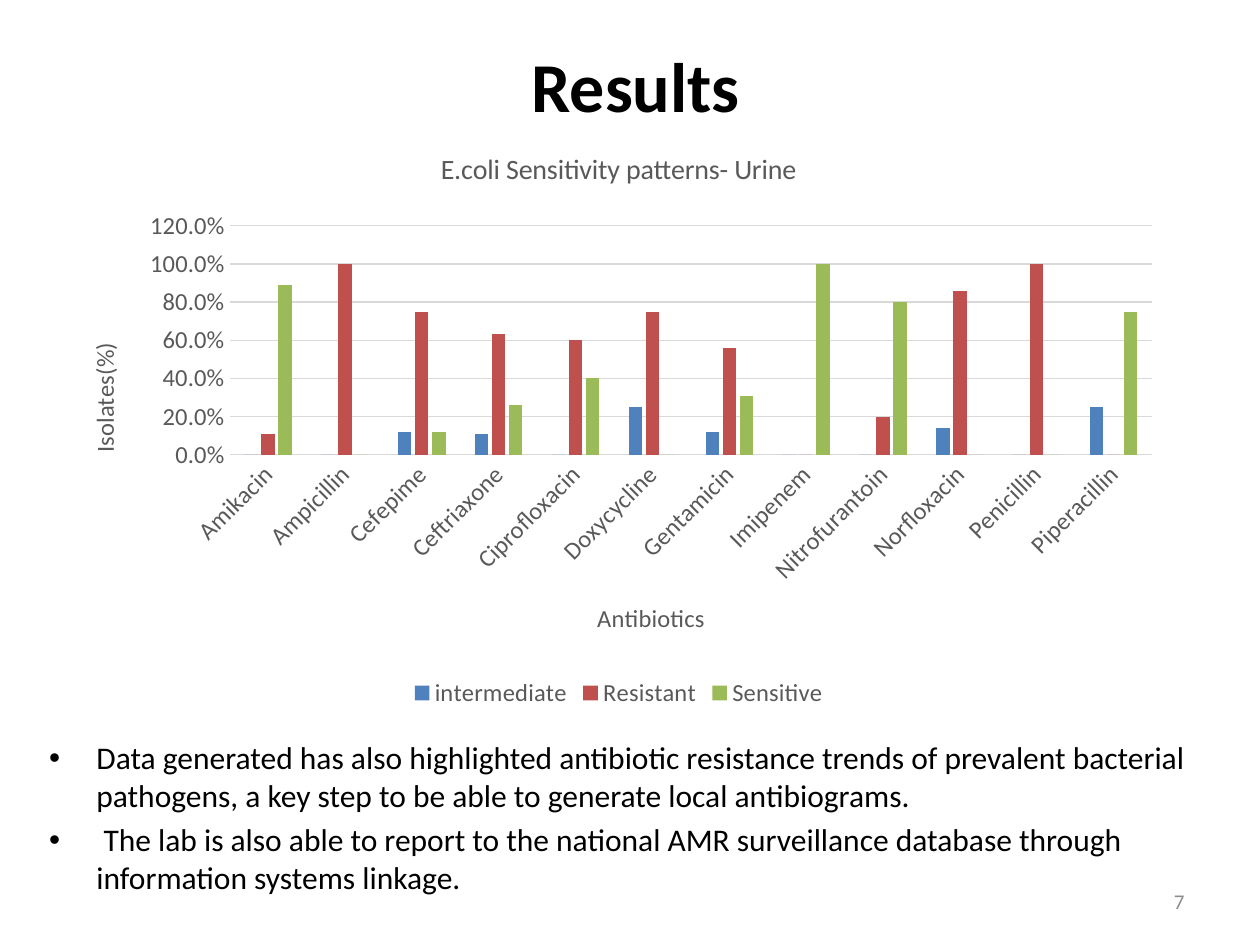
from lxml import etree
from pptx import Presentation
from pptx.chart.data import CategoryChartData
from pptx.dml.color import RGBColor
from pptx.enum.chart import XL_CHART_TYPE, XL_LEGEND_POSITION, XL_TICK_MARK
from pptx.enum.text import MSO_ANCHOR, MSO_AUTO_SIZE, PP_ALIGN
from pptx.oxml.ns import qn
from pptx.util import Inches, Pt

COLUMNS = XL_CHART_TYPE.COLUMN_CLUSTERED
LEGEND_BOTTOM = XL_LEGEND_POSITION.BOTTOM
NO_TICKS = XL_TICK_MARK.NONE
MIDDLE = MSO_ANCHOR.MIDDLE
NO_FIT = MSO_AUTO_SIZE.NONE
RIGHT = PP_ALIGN.RIGHT
FONT = "Calibri"
COLORS = {
    "text": "000000", "chart text": "595959", "grid": "D9D9D9", "number": "8C8C8C",
    "intermediate": "4F81BD", "Resistant": "C0504D", "Sensitive": "9BBB59",
}


def color(key):
    return RGBColor.from_string(COLORS[key])


def write(frame, lines, size=14, ink="chart text", bold=False, align=None):
    frame.text = "\n".join(lines)
    for paragraph in frame.paragraphs:
        if align is not None:
            paragraph.alignment = align
        for run in paragraph.runs:
            run.font.name = FONT
            run.font.size = Pt(size)
            run.font.bold = bold
            run.font.color.rgb = color(ink)


prs = Presentation()
prs.slide_width, prs.slide_height = Inches(10), Inches(7.5)
slide = prs.slides.add_slide(prs.slide_layouts[1])

heading, findings = slide.placeholders
number = slide.shapes.add_textbox(Inches(7.17), Inches(6.95), Inches(2.33), Inches(0.4))
for part, box in (
    (heading, (0.92, 0.17, 8.25, 1)),
    (findings, (0.29, 5.81, 9.5, 1.52)),
):
    part.left, part.top, part.width, part.height = map(Inches, box)
    part.text_frame.auto_size = NO_FIT

write(heading.text_frame, ["Results"], size=40, ink="text", bold=True)
write(findings.text_frame, [
    "Data generated has also highlighted antibiotic resistance trends of prevalent "
    "bacterial pathogens, a key step to be able to generate local antibiograms.",
    " The lab is also able to report to the national AMR surveillance database "
    "through information systems linkage.",
], size=18, ink="text")
number.text_frame.word_wrap = True
number.text_frame.vertical_anchor = MIDDLE
write(number.text_frame, ["7"], size=12, ink="number", align=RIGHT)

sensitivity = CategoryChartData(number_format="0.0%")
sensitivity.categories = [
    "Amikacin", "Ampicillin", "Cefepime", "Ceftriaxone", "Ciprofloxacin", "Doxycycline",
    "Gentamicin", "Imipenem", "Nitrofurantoin", "Norfloxacin", "Penicillin", "Piperacillin",
]
for outcome, shares in {
    "intermediate": (0, 0, 0.12, 0.11, 0, 0.25, 0.12, 0, 0, 0.14, 0, 0.25),
    "Resistant": (0.11, 1, 0.75, 0.63, 0.6, 0.75, 0.56, 0, 0.2, 0.86, 1, 0),
    "Sensitive": (0.89, 0, 0.12, 0.26, 0.4, 0, 0.31, 1, 0.8, 0, 0, 0.75),
}.items():
    sensitivity.add_series(outcome, shares)

chart = slide.shapes.add_chart(
    COLUMNS, Inches(0.5), Inches(1), Inches(8.82), Inches(4.66), sensitivity
).chart
chart.font.name = FONT
chart.font.size = Pt(14)
chart.font.color.rgb = color("chart text")
chart.has_title = True
write(chart.chart_title.text_frame, ["E.coli Sensitivity patterns- Urine"], size=16)
chart.chart_title.include_in_layout = False
chart.has_legend = True
chart.legend.position = LEGEND_BOTTOM
chart.legend.include_in_layout = False

antibiotics, isolates = chart.category_axis, chart.value_axis
for axis, caption in ((antibiotics, "Antibiotics"), (isolates, "Isolates(%)")):
    write(axis.axis_title.text_frame, [caption])
    axis.major_tick_mark = axis.minor_tick_mark = NO_TICKS
    axis.tick_labels.font.size = Pt(14)
    axis.tick_labels.font.name = FONT
    axis.tick_labels.font.color.rgb = color("chart text")
antibiotics._element.find(qn("c:txPr")).find(qn("a:bodyPr")).set("rot", "-2700000")
isolates.axis_title.text_frame._txBody.find(qn("a:bodyPr")).set("rot", "-5400000")
isolates.minimum_scale, isolates.maximum_scale, isolates.major_unit = 0, 1.2, 0.2
isolates.tick_labels.number_format = "0.0%"
isolates.tick_labels.number_format_is_linked = False
isolates.format.line.fill.background()
for line in (antibiotics.format.line, isolates.major_gridlines.format.line):
    line.color.rgb = color("grid")
    line.width = Pt(0.75)

bars = chart.plots[0]
bars.gap_width, bars.overlap, bars.vary_by_categories = 219, -27, False
for series in bars.series:
    series.format.fill.solid()
    series.format.fill.fore_color.rgb = color(series.name)

plot_area = chart._chartSpace.find(".//" + qn("c:plotArea"))
for unplaced in plot_area.findall(qn("c:layout")):
    plot_area.remove(unplaced)
layout = etree.Element(qn("c:layout"))
plot_area.insert(0, layout)
manual = etree.SubElement(layout, qn("c:manualLayout"))
for tag, value in (
    ("layoutTarget", "inner"), ("xMode", "edge"), ("yMode", "edge"),
    ("x", "0.15"), ("y", "0.17"), ("w", "0.83"), ("h", "0.39"),
):
    etree.SubElement(manual, qn(f"c:{tag}")).set("val", value)

prs.save("out.pptx")
